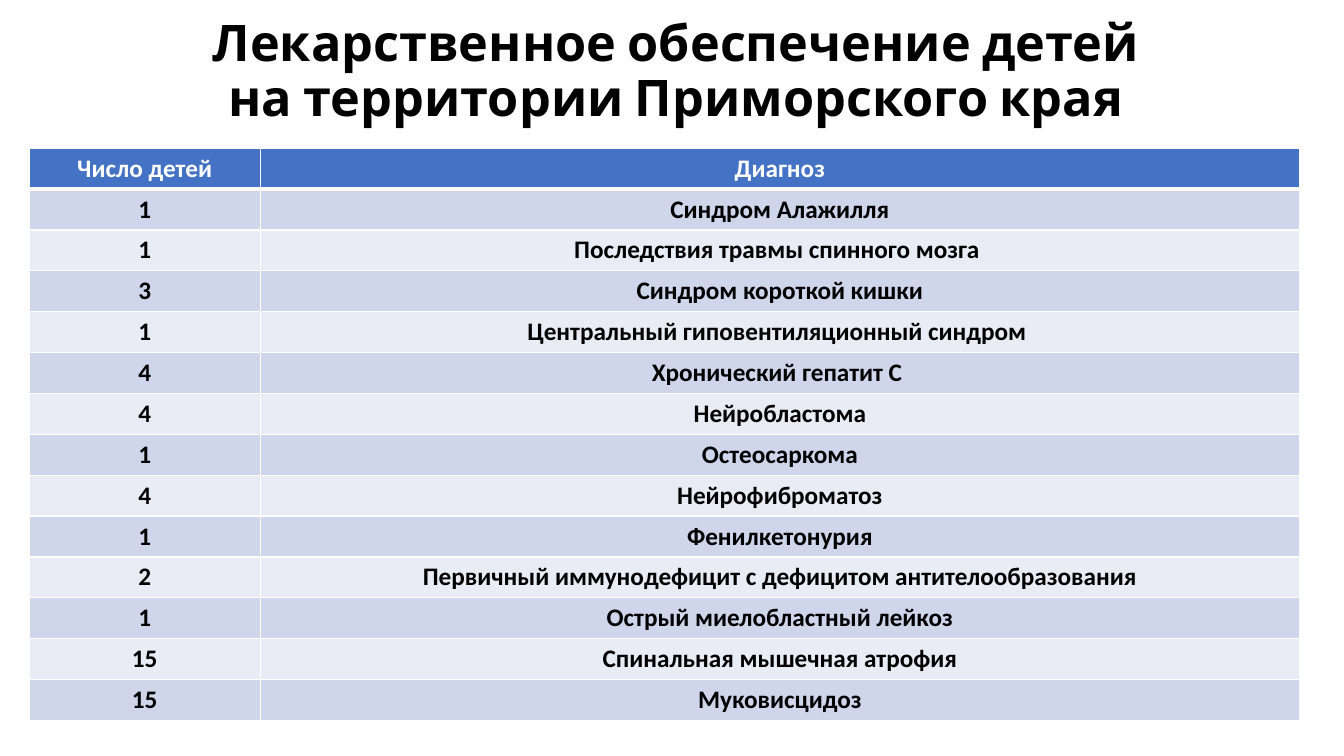
from dataclasses import dataclass

from lxml.etree import SubElement
from pptx import Presentation
from pptx.dml.color import RGBColor
from pptx.enum.text import MSO_ANCHOR, PP_ALIGN
from pptx.oxml.ns import qn
from pptx.util import Inches, Pt

SLIDE_W, SLIDE_H = 13.33, 7.5
TABLE_LEFT, TABLE_TOP, TABLE_H = 0.29, 1.47, 5.68
COLUMNS = (2.29, 10.31)
COLORS = {
    "text": "000000",
    "header": "4472C4",
    "odd_row": "CFD5EA",
    "even_row": "E9EBF5",
    "white": "FFFFFF",
}


@dataclass(frozen=True)
class Row:
    count: str
    diagnosis: str


HEADER = Row("Число детей", "Диагноз")
ROWS = (
    Row("1", "Синдром Алажилля"),
    Row("1", "Последствия травмы спинного мозга "),
    Row("3", "Синдром короткой кишки"),
    Row("1", "Центральный гиповентиляционный синдром "),
    Row("4", "Хронический гепатит С "),
    Row("4", "Нейробластома"),
    Row("1", "Остеосаркома"),
    Row("4", "Нейрофиброматоз"),
    Row("1", "Фенилкетонурия"),
    Row("2", "Первичный иммунодефицит с дефицитом антителообразования"),
    Row("1", "Острый миелобластный лейкоз"),
    Row("15", "Спинальная мышечная атрофия"),
    Row("15", "Муковисцидоз"),
)


def rgb(name: str) -> RGBColor:
    return RGBColor.from_string(COLORS[name])


def write(p, text: str, font_name: str, size: float, color: str) -> None:
    """Fill a paragraph with centred bold text."""
    p.text = text
    p.alignment = PP_ALIGN.CENTER
    for font in (p.font, *(r.font for r in p.runs)):
        font.name, font.size, font.bold = font_name, Pt(size), True
        font.color.rgb = rgb(color)


def add_border(cell, side: str, width: float) -> None:
    line = SubElement(cell._tc.get_or_add_tcPr(), qn(f"a:{side}"), w=str(Pt(width)))
    fill = SubElement(line, qn("a:solidFill"))
    SubElement(fill, qn("a:srgbClr"), val=COLORS["white"])


def add_title(slide, text: str) -> None:
    sp = slide.shapes.add_textbox(Inches(0.64), Inches(0.3), Inches(12.13), Inches(0.84))
    tf = sp.text_frame
    tf.word_wrap = True
    tf.vertical_anchor = MSO_ANCHOR.MIDDLE
    p = tf.paragraphs[0]
    p.line_spacing = 0.9
    write(p, text, "Cabin", 36, "text")


def add_diagnosis_table(slide, rows: tuple[Row, ...]) -> None:
    table = slide.shapes.add_table(
        len(rows), len(COLUMNS), Inches(TABLE_LEFT), Inches(TABLE_TOP),
        Inches(sum(COLUMNS)), Inches(TABLE_H),
    ).table
    for column, width in zip(table.columns, COLUMNS):
        column.width = Inches(width)

    for i, row in enumerate(rows):
        if i == 0:
            fill, color = "header", "white"
        else:
            fill, color = ("odd_row" if i % 2 else "even_row"), "text"
        for cell, text in zip(table.rows[i].cells, (row.count, row.diagnosis)):
            write(cell.text_frame.paragraphs[0], text, "Calibri", 18, color)
            # The header is set off by a thicker rule
            for side, width in (("lnL", 1), ("lnR", 1),
                                ("lnT", 3 if i == 1 else 1),
                                ("lnB", 3 if i == 0 else 1)):
                add_border(cell, side, width)
            cell.fill.solid()
            cell.fill.fore_color.rgb = rgb(fill)


def main() -> None:
    prs = Presentation()
    prs.slide_width, prs.slide_height = Inches(SLIDE_W), Inches(SLIDE_H)
    slide = prs.slides.add_slide(prs.slide_layouts[6])

    # Title
    add_title(slide, "Лекарственное обеспечение детей\nна территории Приморского края")

    # Children by diagnosis
    add_diagnosis_table(slide, (HEADER, *ROWS))

    prs.save("out.pptx")


if __name__ == "__main__":
    main()
